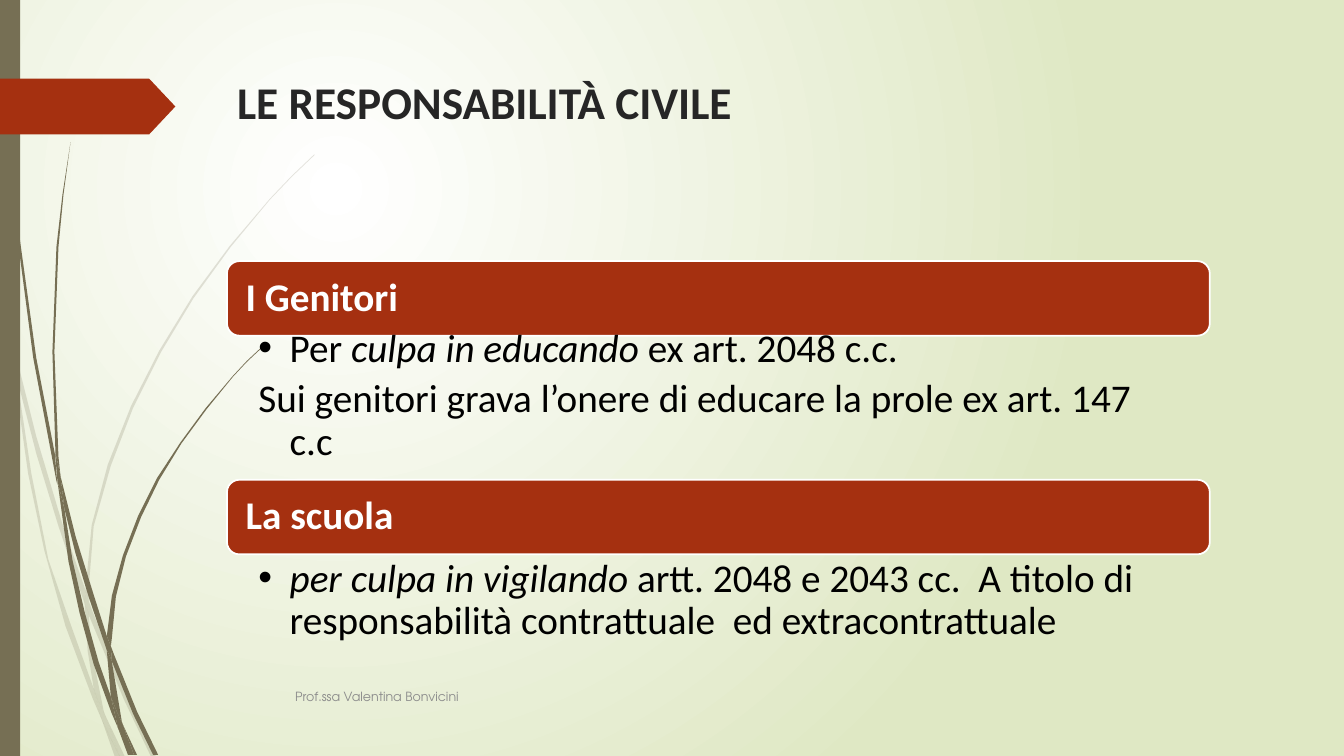
from dataclasses import dataclass
from lxml.etree import SubElement as Sub
from pptx import Presentation as Deck
from pptx.dml.color import RGBColor as Rgb
from pptx.enum.shapes import MSO_SHAPE as Kind
from pptx.enum.text import MSO_ANCHOR as Anchor, MSO_AUTO_SIZE as Fit, PP_ALIGN as Align
from pptx.oxml.ns import qn
from pptx.util import Cm, Pt


@dataclass(frozen=True)
class Theme:
    white: Rgb = Rgb(255, 255, 255)
    black: Rgb = Rgb(0, 0, 0)
    lime: Rgb = Rgb.from_string("DFE8C4")
    olive: Rgb = Rgb.from_string("766F54")
    rust: Rgb = Rgb.from_string("A53010")
    dark: Rgb = Rgb.from_string("262626")
    grey: Rgb = Rgb.from_string("8C8C8C")
    face: str = "Calibri"
    thin: str = "TeX Gyre Adventor"
    head: Pt = Pt(32.4)
    text: Pt = Pt(28)
    foot: Pt = Pt(9)


LOOK = Theme()
UNIT = Cm(0.0254)
PALE = (
    ((11, 350), (9, 322), (0, 282), (0, 299), (10, 344)),
    ((58, 522), (84, 599), (85, 586), (62, 520), (36, 433), (14, 345), (17, 376), (36, 450)),
    ((92, 607), (88, 596), (88, 610), (123, 694), (150, 751), (155, 751), (127, 692)),
    ((119, 751), (124, 751), (105, 711)),
    ((93, 683), (70, 619), (48, 555), (31, 469), (17, 376), (11, 350), (28, 470),
     (44, 546), (65, 621), (92, 693), (101, 714), (99, 707)),
    ((84, 599), (87, 646), (93, 683), (96, 692), (105, 711), (103, 706), (91, 646), (88, 610), (88, 608)),
    ((88, 584), (93, 522), (110, 462), (132, 405), (160, 349), (192, 296), (229, 245), (268, 198),
     (290, 175), (312, 154), (312, 153), (289, 175), (268, 197), (228, 244), (191, 294),
     (158, 348), (130, 403), (107, 461), (91, 521), (85, 584), (85, 586), (88, 596)),
    ((101, 714), (114, 751), (119, 751)),
    ((88, 608), (88, 610), (88, 596), (85, 586), (84, 599)),
    ((96, 692), (93, 683), (99, 707), (101, 714), (119, 751), (105, 711)),
)
DEEP = (
    ((7, 110), (17, 233), (33, 355), (56, 477), (57, 481), (55, 457), (55, 453), (36, 355),
     (19, 232), (8, 109), (5, 48), (4, 0), (3, 0), (4, 48)),
    ((88, 592), (106, 645), (106, 631), (93, 590), (75, 532), (60, 472), (64, 505), (75, 549)),
    ((113, 649), (110, 641), (111, 656), (132, 708), (152, 749), (157, 749), (136, 706)),
    ((110, 691), (98, 657), (84, 607), (72, 556), (64, 505), (57, 477), (68, 557),
     (79, 608), (93, 659), (111, 708), (117, 722), (116, 717)),
    ((60, 472), (58, 453), (54, 349), (58, 245), (63, 193), (70, 141),
     (62, 193), (56, 245), (52, 349), (55, 449)),
    ((133, 749), (136, 749), (122, 719)),
    ((57, 477), (64, 505), (60, 472), (55, 449), (55, 453)),
    ((111, 633), (115, 592), (125, 552), (140, 513), (158, 476), (180, 440), (205, 406), (231, 374),
     (245, 359), (261, 344), (260, 344), (245, 358), (231, 373), (204, 405), (179, 439),
     (156, 474), (137, 512), (122, 551), (111, 591), (106, 631), (110, 641)),
    ((117, 722), (127, 749), (131, 749)),
    ((106, 645), (110, 691), (116, 706), (122, 719), (121, 716), (111, 656), (109, 651)),
    ((106, 645), (109, 651), (111, 656), (110, 641), (106, 631)),
    ((116, 706), (110, 691), (116, 717), (117, 722), (130, 749), (133, 749), (122, 719)),
)


def put(item, **vals):
    for name, val in vals.items():
        setattr(item, name, val)


def place(item, left, top, width, height):
    put(item, left=Cm(left), top=Cm(top), width=Cm(width), height=Cm(height))


def paint(shape, hue, edge=None):
    shape.shadow.inherit = False
    shape.fill.solid()
    shape.fill.fore_color.rgb = hue
    if edge is None:
        shape.line.fill.background()
    else:
        shape.line.color.rgb = edge
        shape.line.width = Pt(1.25)


def write(para, text, hue, size, face=LOOK.face, **vals):
    run = para.add_run()
    run.text = text
    put(run.font, name=face, size=size, **vals)
    run.font.color.rgb = hue


def shade(slide):
    fill = slide.background.fill
    fill.gradient()
    for stop, hue in zip(fill.gradient_stops, (LOOK.white, LOOK.lime)):
        stop.color.rgb = hue
    fill.gradient_stops[0].position = 0
    fill.gradient_stops[1].position = 1
    grad = slide.element.find(".//" + qn("a:gradFill"))
    grad.remove(grad.find(qn("a:lin")))
    ring = Sub(grad, qn("a:path"), {"path": "circle"})
    Sub(ring, qn("a:fillToRect"), {"l": "50000", "t": "50000", "r": "100000", "b": "100000"})


def grass(slide, blades, alpha=100):
    tuft = slide.shapes.add_group_shape().shapes
    for first, *rest in blades:
        form = tuft.build_freeform(*first, scale=UNIT)
        form.add_line_segments(rest, close=True)
        blade = form.convert_to_shape()
        paint(blade, LOOK.olive)
        if alpha < 100:
            tone = blade.element.spPr.find(".//" + qn("a:srgbClr"))
            Sub(tone, qn("a:alpha"), {"val": str(alpha * 1000)})


def block(slide, kind, box, hue, edge=None):
    shape = slide.shapes.add_shape(kind, *map(Cm, box))
    paint(shape, hue, edge)
    return shape


def title(slide, text):
    head = slide.shapes.title
    place(head, 5.72, 1.73, 26.26, 3.56)
    put(head.text_frame, auto_size=Fit.NONE, word_wrap=True, vertical_anchor=Anchor.TOP)
    para = head.text_frame.paragraphs[0]
    para.alignment = Align.LEFT
    write(para, text, LOOK.dark, LOOK.head, bold=True)


def bar(slide, top, text):
    shape = block(slide, Kind.ROUNDED_RECTANGLE, (5.72, top, 24.77, 1.88), LOOK.rust, LOOK.white)
    put(shape.text_frame, margin_left=Cm(0.38), vertical_anchor=Anchor.MIDDLE, word_wrap=True)
    para = shape.text_frame.paragraphs[0]
    put(para, alignment=Align.LEFT, line_spacing=0.9)
    write(para, text, LOOK.white, LOOK.text, bold=True)


def points(slide, body, top, height, items):
    place(body, 5.72, top, 24.77, height)
    slide.shapes.element.append(body.element)
    frame = body.text_frame
    put(frame, auto_size=Fit.NONE, word_wrap=True, vertical_anchor=Anchor.TOP,
        margin_left=Cm(0.79), margin_right=Cm(0.71), margin_top=Cm(0.13), margin_bottom=Cm(0.13))
    for rank, (dot, runs) in enumerate(items):
        para = frame.add_paragraph() if rank else frame.paragraphs[0]
        put(para, alignment=Align.LEFT, line_spacing=0.9, space_before=Pt(0), space_after=Pt(5.6))
        props = para._p.get_or_add_pPr()
        props.set("marL", str(Cm(0.79)))
        props.set("indent", str(-Cm(0.79)))
        if dot:
            Sub(props, qn("a:buChar"), {"char": "•"})
        else:
            Sub(props, qn("a:buNone"))
        for text, slant in runs:
            write(para, text, LOOK.black, LOOK.text, italic=slant)


def footer(slide, text):
    frame = slide.shapes.add_textbox(Cm(7.19), Cm(17.04), Cm(21.16), Cm(1.02)).text_frame
    put(frame, word_wrap=True, vertical_anchor=Anchor.MIDDLE)
    write(frame.paragraphs[0], text, LOOK.grey, LOOK.foot, LOOK.thin)


def main():
    deck = Deck()
    put(deck, slide_width=Cm(33.87), slide_height=Cm(19.05))
    slide = deck.slides.add_slide(deck.slide_layouts[3])
    shade(slide)
    grass(slide, PALE, 20)
    grass(slide, DEEP)
    block(slide, Kind.RECTANGLE, (0, 0, 0.51, 19.05), LOOK.olive)
    flag = block(slide, Kind.PENTAGON, (0, 1.98, 4.42, 1.41), LOOK.rust)
    flag.adjustments[0] = 0.47
    title(slide, "LE RESPONSABILITÀ CIVILE")
    bar(slide, 6.58, "I Genitori")
    points(slide, slide.placeholders[1], 8.15, 3.94, (
        (True, (("Per ", False), ("culpa in educando ", True), ("ex art. 2048 c.c.", False))),
        (False, (("Sui genitori grava l’onere di educare la prole ex art. 147 c.c", False),)),
    ))
    bar(slide, 12.09, "La scuola")
    points(slide, slide.placeholders[2], 13.94, 3.84, (
        (True, (("per culpa in vigilando ", True),
                ("artt. 2048 e 2043 cc.  A titolo di responsabilità contrattuale  ed extracontrattuale", False))),
    ))
    footer(slide, "Prof.ssa Valentina Bonvicini")
    deck.save("out.pptx")


if __name__ == "__main__":
    main()
